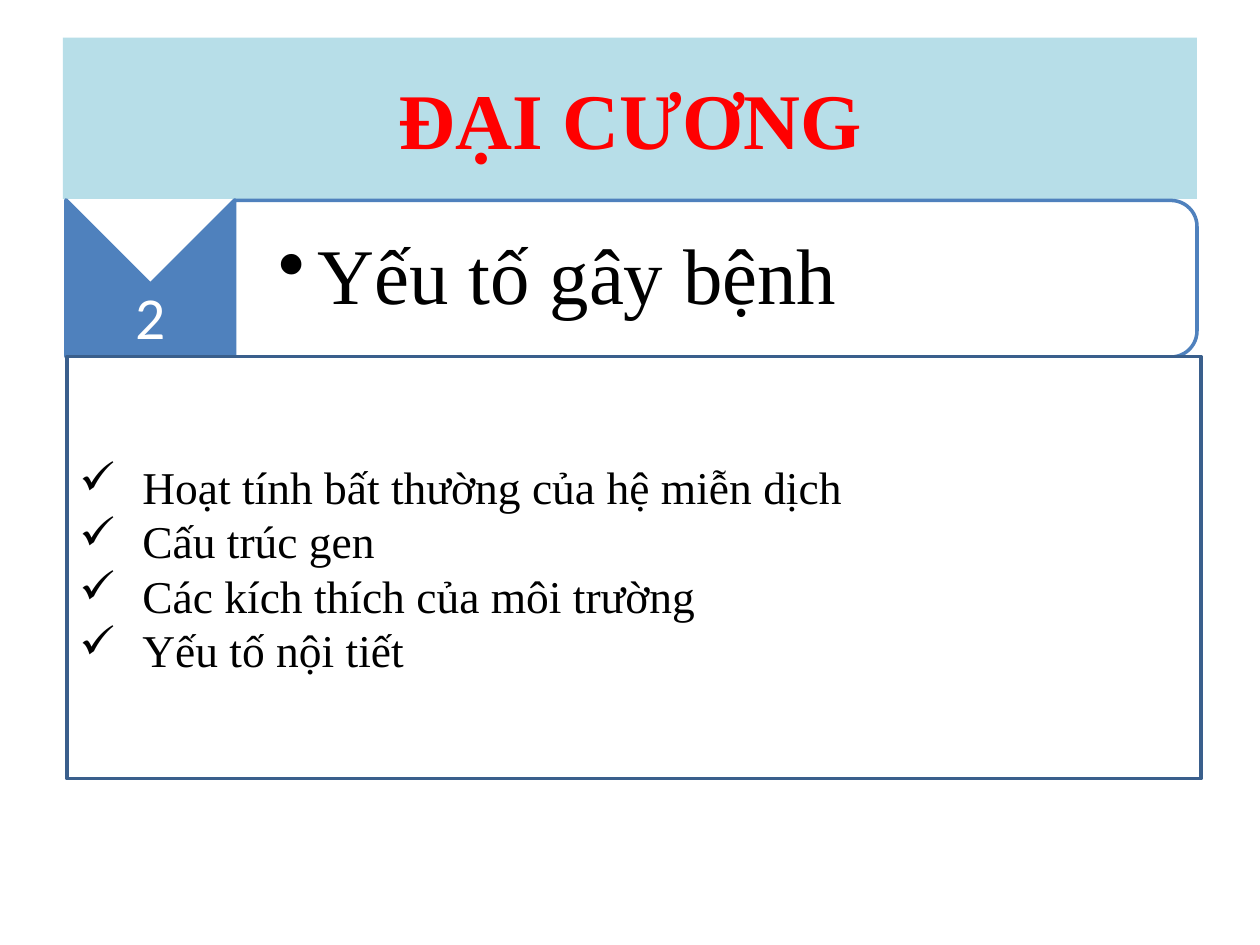
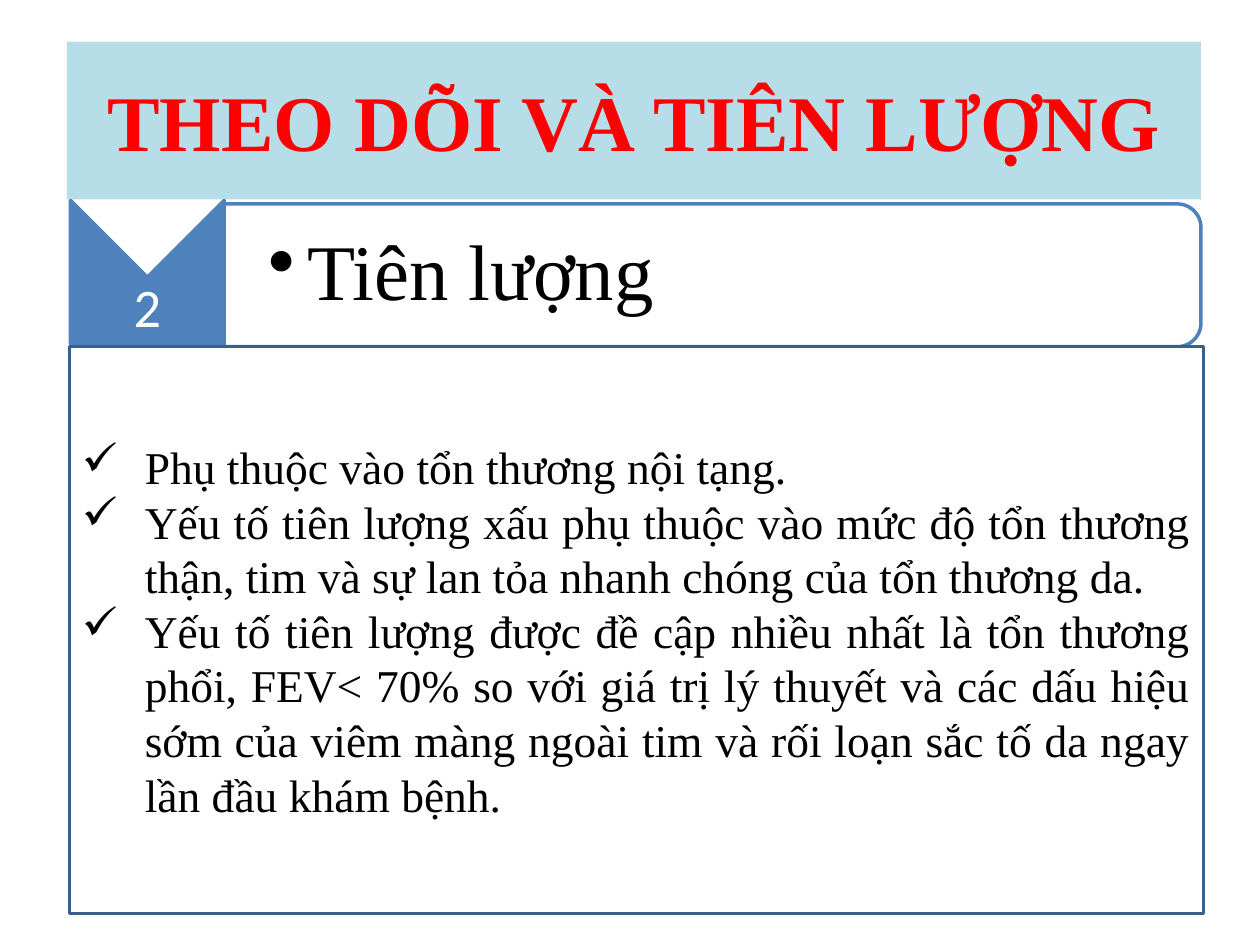
from lxml.etree import SubElement
from pptx import Presentation
from pptx.dml.color import RGBColor
from pptx.enum.shapes import MSO_SHAPE as Shape
from pptx.enum.text import MSO_ANCHOR as Anchor, PP_ALIGN as Align
from pptx.oxml.ns import qn
from pptx.util import Cm, Pt

SERIF, SANS = "Times New Roman", "Calibri"
BLUE, DARK_BLUE, PALE_BLUE = "4F81BD", "3A5F8C", "B7DEE8"
RED, BLACK, WHITE = "FF0000", "000000", "FFFFFF"

TITLE = {"size": 45, "name": SERIF, "color": RED, "bold": True}
HEADING = {"size": 45, "name": SERIF, "color": BLACK}
BODY = {"size": 26, "name": SERIF, "color": BLACK}

FULL_WIDTH = 22.86
BADGE_RATIO = 0.7    # badge width / badge height
BAND_RATIO = 0.65    # band height / badge height
PAD = 0.15           # between the band and its text

# Places are centimetres: "title" and "panel" are (left, top, height),
# "badge" is (left, top, width), "band" is (top, right).
SLIDES = [
    {
        "title_text": "ĐẠI CƯƠNG",
        "number": "2",
        "number_size": 34,
        "heading": "Yếu tố gây bệnh",
        "points": [
            "Hoạt tính bất thường của hệ miễn dịch",
            "Cấu trúc gen",
            "Các kích thích của môi trường",
            "Yếu tố nội tiết",
        ],
        "align": Align.LEFT,
        "title": (1.27, 0.76, 3.25),
        "badge": (1.33, 4.03, 3.4),
        "band": (4.04, 24.13),
        "panel": (1.35, 7.19, 8.51),
    },
    {
        "title_text": "THEO DÕI VÀ TIÊN LƯỢNG",
        "number": "2",
        "number_size": 31,
        "heading": "Tiên lượng",
        "points": [
            "Phụ thuộc vào tổn thương nội tạng.",
            "Yếu tố tiên lượng xấu phụ thuộc vào mức độ tổn thương thận, "
            "tim và sự lan tỏa nhanh chóng của tổn thương da.",
            "Yếu tố tiên lượng được đề cập nhiều nhất là tổn thương phổi, "
            "FEV< 70% so với giá trị lý thuyết và các dấu hiệu sớm của viêm "
            "màng ngoài tim và rối loạn sắc tố da ngay lần đầu khám bệnh.",
        ],
        "align": Align.JUSTIFY,
        "title": (1.35, 0.84, 3.18),
        "badge": (1.42, 4.04, 3.1),
        "band": (4.11, 24.21),
        "panel": (1.4, 6.99, 11.43),
    },
]


def rgb(color):
    return RGBColor.from_string(color)


def add_box(page, kind, left, top, width, height, fill, line=None):
    box = page.shapes.add_shape(kind, Cm(left), Cm(top), Cm(width), Cm(height))
    box.shadow.inherit = False
    box.fill.solid()
    box.fill.fore_color.rgb = rgb(fill)
    if line:
        box.line.color.rgb = rgb(line)
        box.line.width = Pt(2)
    else:
        box.line.fill.background()
    return box


def add_turned_box(page, kind, left, top, width, height, fill, line):
    """Add a shape turned by 90 degrees that covers the given area."""
    shift = (width - height) / 2
    box = add_box(page, kind, left + shift, top - shift, height, width, fill, line)
    box.rotation = 90


def add_text_box(page, left, top, width, height):
    return page.shapes.add_textbox(Cm(left), Cm(top), Cm(width), Cm(height))


def set_bullet(para, char, indent):
    props = para._p.get_or_add_pPr()
    props.set("marL", str(Cm(indent)))
    props.set("indent", str(-Cm(indent)))
    SubElement(props, qn("a:buChar"), char=char)


def write(box, lines, style, align, bullet=None, insets=None, spacing=None):
    """Fill a box with paragraphs; bullet is (char, indent), insets (left, others)."""
    frame = box.text_frame
    frame.word_wrap = True
    frame.vertical_anchor = Anchor.MIDDLE
    if insets:
        frame.margin_left = Cm(insets[0])
        for side in ("right", "top", "bottom"):
            setattr(frame, f"margin_{side}", Cm(insets[1]))
    for index, line in enumerate(lines):
        para = frame.add_paragraph() if index else frame.paragraphs[0]
        para.alignment = align
        if spacing:
            para.line_spacing = spacing
        if bullet:
            set_bullet(para, *bullet)
        span = para.add_run()
        span.text = line
        for key, value in style.items():
            if key == "color":
                span.font.color.rgb = rgb(value)
            else:
                setattr(span.font, key, Pt(value) if key == "size" else value)


def add_title(page, content):
    left, top, height = content["title"]
    box = add_box(page, Shape.RECTANGLE, left, top, FULL_WIDTH, height, PALE_BLUE)
    write(box, [content["title_text"]], TITLE, Align.CENTER)


def add_numbered_heading(page, content):
    left, top, width = content["badge"]
    height = width / BADGE_RATIO
    add_turned_box(page, Shape.CHEVRON, left, top, width, height, BLUE, BLUE)
    number = add_text_box(page, left, top + width / 2, width, height - width)
    style = {"size": content["number_size"], "name": SANS, "color": WHITE}
    write(number, [content["number"]], style, Align.CENTER,
          insets=(0.05, 0.05), spacing=0.9)

    band_top, band_right = content["band"]
    band_left = left + width
    band_width, band_height = band_right - band_left, height * BAND_RATIO
    add_turned_box(page, Shape.ROUND_2_SAME_RECTANGLE, band_left, band_top,
                   band_width, band_height, WHITE, BLUE)
    heading = add_text_box(page, band_left, band_top + PAD,
                           band_width - PAD, band_height - 2 * PAD)
    write(heading, [content["heading"]], HEADING, Align.LEFT,
          bullet=("•", 0.79), insets=(0.89, 0.08), spacing=0.9)


def add_panel(page, content):
    left, top, height = content["panel"]
    box = add_box(page, Shape.RECTANGLE, left, top, FULL_WIDTH, height,
                  WHITE, DARK_BLUE)
    write(box, content["points"], BODY, content["align"], bullet=("✓", 1.27))


def main():
    deck = Presentation()
    deck.slide_width, deck.slide_height = Cm(25.4), Cm(19.05)
    for content in SLIDES:
        page = deck.slides.add_slide(deck.slide_layouts[6])
        add_title(page, content)
        add_numbered_heading(page, content)
        add_panel(page, content)
    deck.save("out.pptx")


if __name__ == "__main__":
    main()
